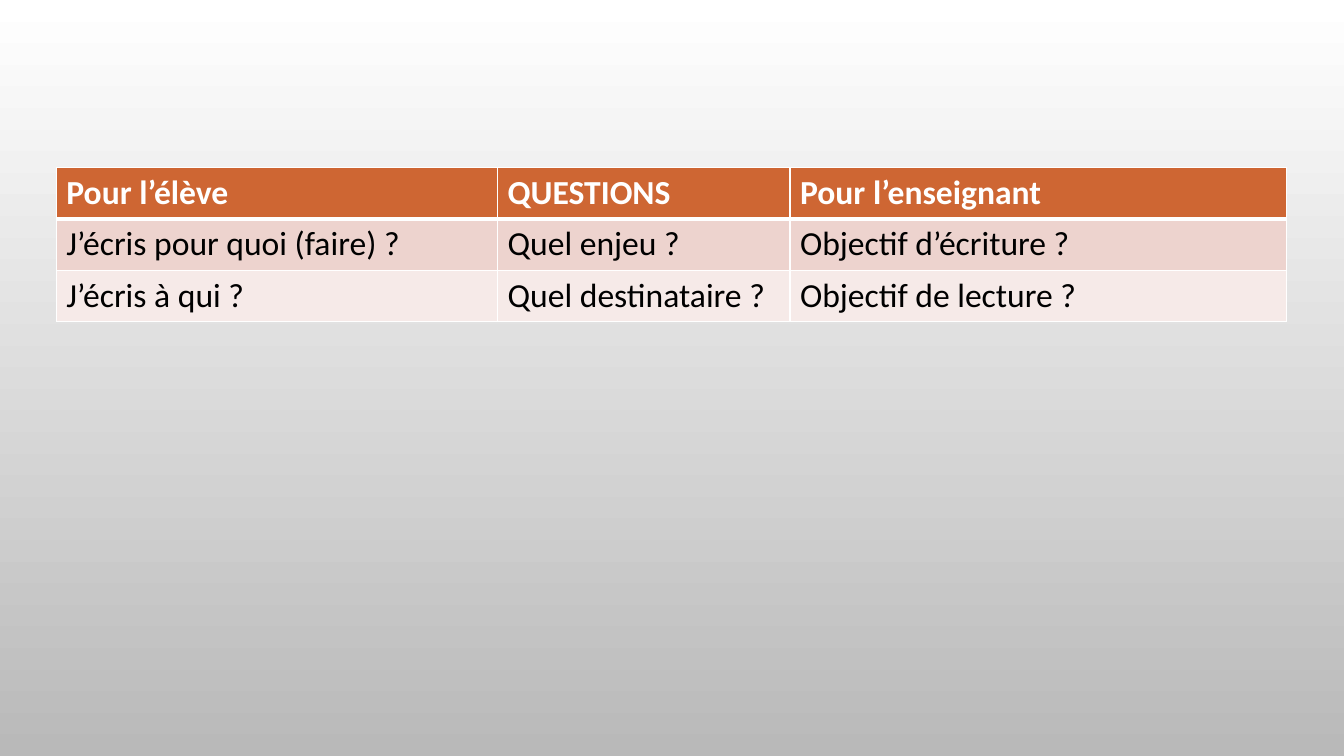
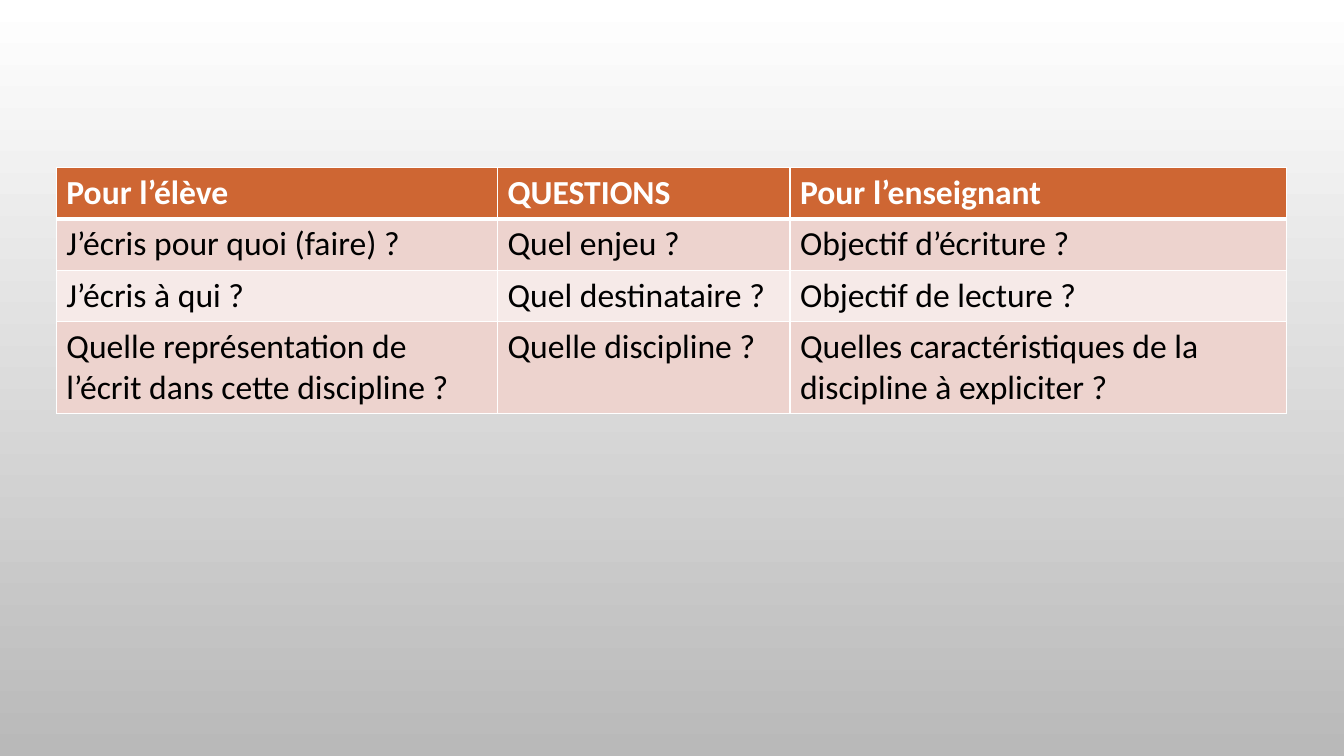
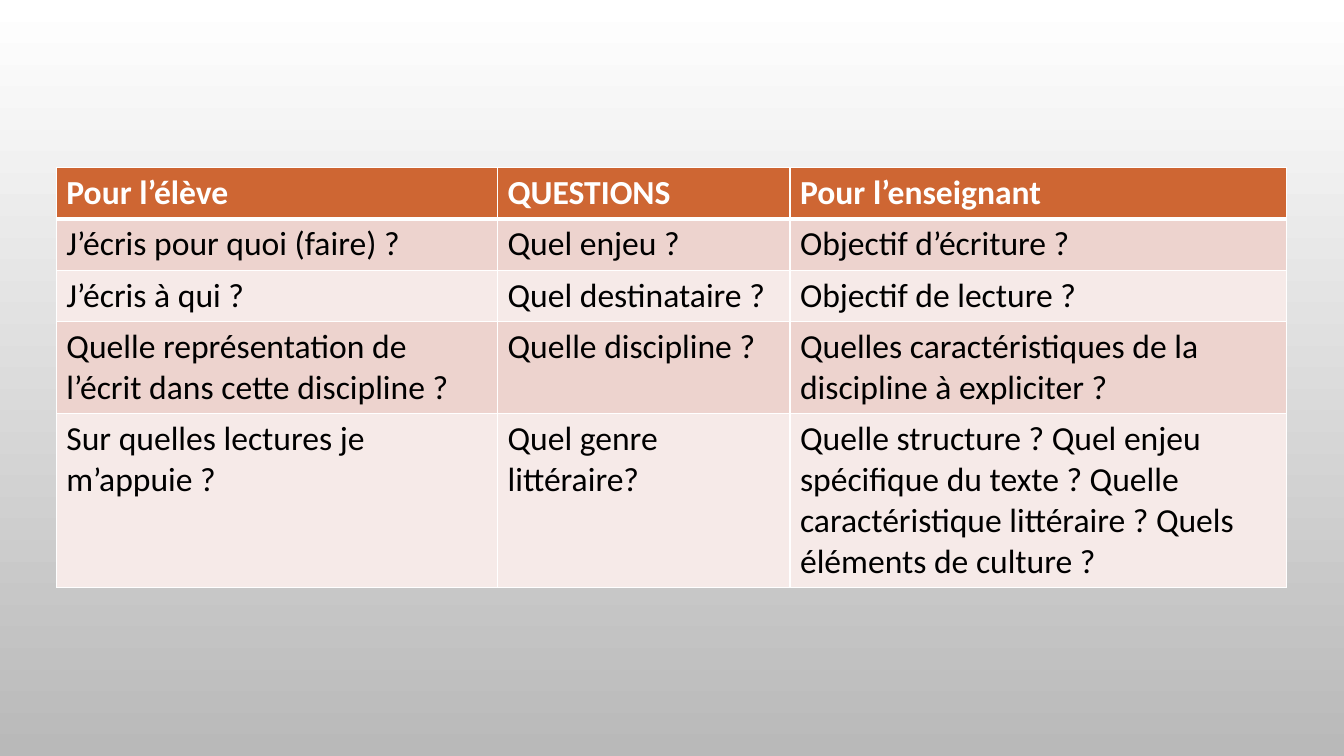
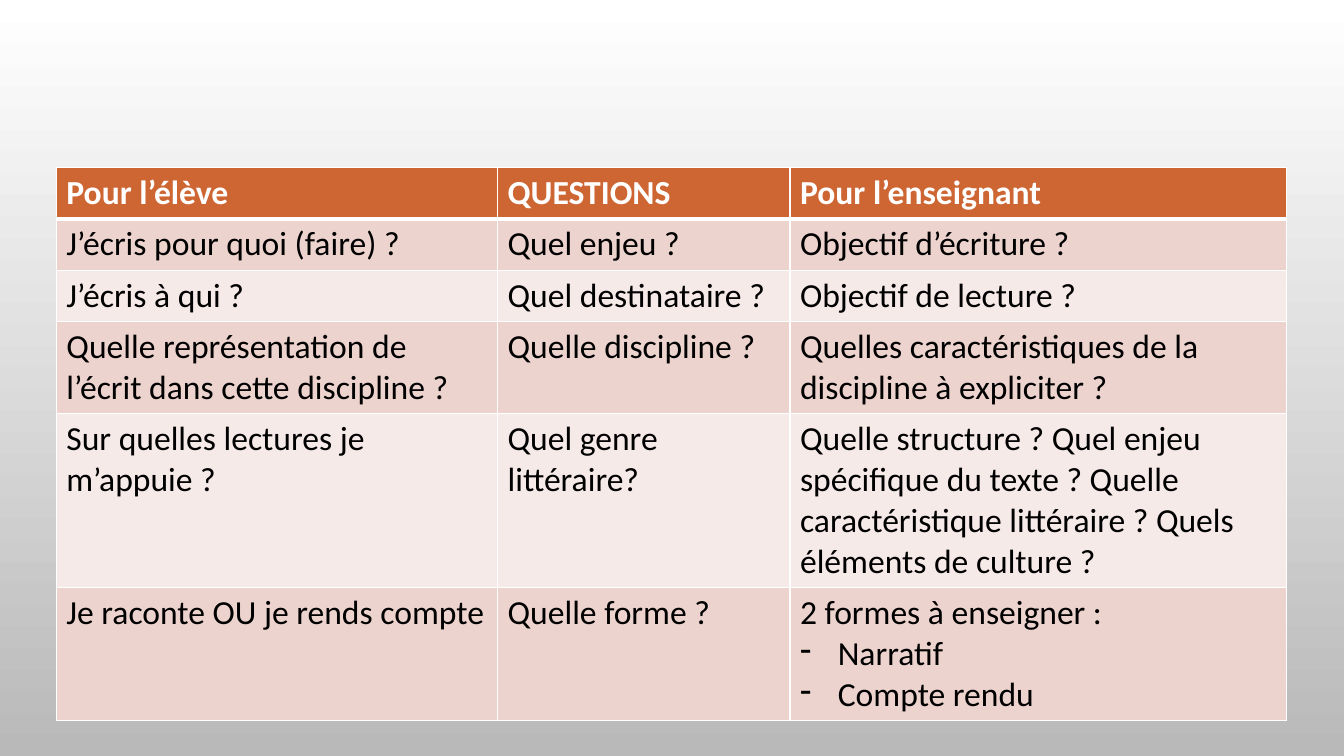
from dataclasses import dataclass
from typing import NamedTuple

from lxml.etree import SubElement
from pptx import Presentation
from pptx.dml.color import RGBColor
from pptx.oxml.ns import qn
from pptx.presentation import Presentation as Deck
from pptx.table import _Cell as Cell
from pptx.util import Cm, Pt

WHITE = RGBColor(0xFF, 0xFF, 0xFF)
BLACK = RGBColor(0x00, 0x00, 0x00)
GREY = RGBColor(0xB9, 0xB9, 0xB9)
ORANGE = RGBColor(0xCE, 0x66, 0x33)
PINK = RGBColor(0xED, 0xD3, 0xCE)
PALE_PINK = RGBColor(0xF6, 0xEA, 0xE8)

FONT = "Calibri"
TEXT_SIZE = Pt(24)
LEFT, TOP = Cm(1.42), Cm(4.23)
COLUMN_WIDTHS = (Cm(11.12), Cm(7.37), Cm(12.52))
ROW_HEIGHT = Cm(1.04)
DASH_INDENT = Cm(0.95)
THIN, THICK = Pt(1), Pt(3)
BLANK_LAYOUT = 6


class Row(NamedTuple):
    pupil: str
    question: str
    teacher: str
    teacher_dashes: tuple[str, ...] = ()


@dataclass(frozen=True)
class RowStyle:
    fill: RGBColor
    ink: RGBColor = BLACK
    bold: bool = False
    top: int = THIN
    bottom: int = THIN


HEADER = Row("Pour l’élève", "QUESTIONS", "Pour l’enseignant")
QUESTIONS = (
    Row("J’écris pour quoi (faire) ?", "Quel enjeu ?", "Objectif d’écriture ?"),
    Row("J’écris à qui ?", "Quel destinataire ?", "Objectif de lecture ?"),
    Row(
        "Quelle représentation de l’écrit dans cette discipline ?",
        "Quelle discipline ?",
        "Quelles caractéristiques de la discipline à expliciter ?",
    ),
    Row(
        "Sur quelles lectures je m’appuie ?",
        "Quel genre littéraire?",
        "Quelle structure ? Quel enjeu spécifique du texte ? "
        "Quelle caractéristique littéraire ? Quels éléments de culture ?",
    ),
    Row(
        "Je raconte OU je rends compte",
        "Quelle forme ?",
        "2 formes à enseigner :",
        ("Narratif", "Compte rendu"),
    ),
)
FIRST_SLIDE_QUESTIONS = 2


def row_style(index: int) -> RowStyle:
    if index == 0:
        return RowStyle(ORANGE, WHITE, bold=True, bottom=THICK)
    return RowStyle(PINK if index % 2 else PALE_PINK, top=THICK if index == 1 else THIN)


def draw_borders(cell: Cell, style: RowStyle) -> None:
    properties = cell._tc.get_or_add_tcPr()
    sides = {"lnL": THIN, "lnR": THIN, "lnT": style.top, "lnB": style.bottom}
    for side, width in sides.items():
        border = SubElement(properties, qn(f"a:{side}"), w=str(int(width)))
        border_fill = SubElement(border, qn("a:solidFill"))
        SubElement(border_fill, qn("a:srgbClr"), val=str(WHITE))


def fill_cell(cell: Cell, text: str, dashes: tuple[str, ...], style: RowStyle) -> None:
    draw_borders(cell, style)
    cell.fill.solid()
    cell.fill.fore_color.rgb = style.fill
    cell.text_frame.text = text
    for dash in dashes:
        item = cell.text_frame.add_paragraph()
        item.text = dash
        properties = item._p.get_or_add_pPr()
        properties.set("marL", str(int(DASH_INDENT)))
        properties.set("indent", str(-int(DASH_INDENT)))
        SubElement(properties, qn("a:buFontTx"))
        SubElement(properties, qn("a:buChar"), char="-")
    for paragraph in cell.text_frame.paragraphs:
        for run in paragraph.runs:
            run.font.name = FONT
            run.font.size = TEXT_SIZE
            run.font.bold = style.bold
            run.font.color.rgb = style.ink


def paint_background(deck: Deck) -> None:
    fill = deck.slide_master.background.fill
    fill.gradient()
    fill.gradient_angle = 270
    for stop, color in zip(fill.gradient_stops, (WHITE, GREY)):
        stop.color.rgb = color


def add_question_slide(deck: Deck, questions: tuple[Row, ...]) -> None:
    slide = deck.slides.add_slide(deck.slide_layouts[BLANK_LAYOUT])
    rows = (HEADER, *questions)
    table = slide.shapes.add_table(
        len(rows), len(COLUMN_WIDTHS), LEFT, TOP, sum(COLUMN_WIDTHS), ROW_HEIGHT * len(rows)
    ).table
    for column, width in zip(table.columns, COLUMN_WIDTHS):
        column.width = width
    for index, row in enumerate(rows):
        style = row_style(index)
        fill_cell(table.cell(index, 0), row.pupil, (), style)
        fill_cell(table.cell(index, 1), row.question, (), style)
        fill_cell(table.cell(index, 2), row.teacher, row.teacher_dashes, style)


def main() -> None:
    deck = Presentation()
    deck.slide_width, deck.slide_height = Cm(33.87), Cm(19.05)
    paint_background(deck)
    for count in range(FIRST_SLIDE_QUESTIONS, len(QUESTIONS) + 1):
        add_question_slide(deck, QUESTIONS[:count])
    deck.save("out.pptx")


if __name__ == "__main__":
    main()
